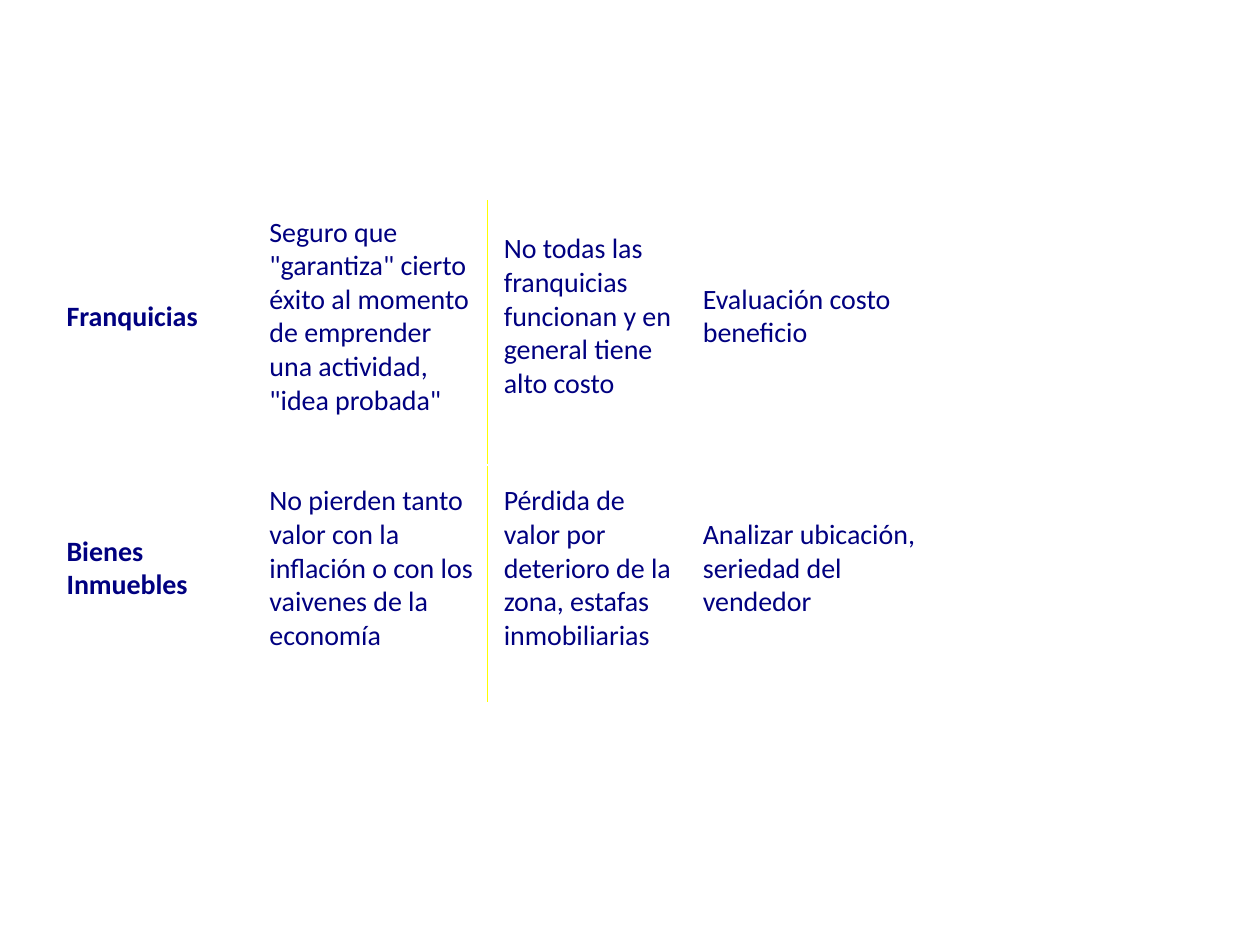
"""Build a slide comparing two investment options in a framed grid."""
from dataclasses import dataclass

import pptx
import pptx.dml.color
import pptx.enum.shapes
import pptx.enum.text
import pptx.util

Inches = pptx.util.Inches


@dataclass(frozen=True)
class Theme:
    font: str = "Calibri"
    size: int = 16
    ink: str = "000080"
    paper: str = "FFFFFF"
    accent: str = "FFFF00"
    line: float = 0.75


THEME = Theme()
INSET = 0.01
COLUMNS = [
    (0.42, 1.62, 1.59, THEME.accent),
    (2.03, 1.85, 1.82, THEME.accent),
    (3.89, 1.58, 1.55, THEME.paper),
    (5.47, 2.01, 1.99, THEME.accent),
    (7.48, 2.19, 2.16, THEME.paper),
]
ROWS = [
    (1.58, 2.11, [
        "Franquicias",
        'Seguro que "garantiza" cierto éxito al momento de emprender una actividad, "idea probada"',
        "No todas las franquicias funcionan y en general tiene alto costo",
        "Evaluación costo beneficio",
        "",
    ]),
    (3.69, 1.89, [
        "Bienes Inmuebles",
        "No pierden tanto valor con la inflación o con los vaivenes de la economía",
        "Pérdida de valor por deterioro de la zona, estafas inmobiliarias",
        "Analizar ubicación, seriedad del vendedor",
        "",
    ]),
]


def rgb(value):
    return pptx.dml.color.RGBColor.from_string(value)


def add_rect(shapes, left, top, width, height, fill):
    sp = shapes.add_shape(
        pptx.enum.shapes.MSO_SHAPE.RECTANGLE,
        Inches(left), Inches(top), Inches(width), Inches(height))
    sp.shadow.inherit = False
    sp.fill.solid()
    sp.fill.fore_color.rgb = rgb(fill)
    sp.line.color.rgb = rgb(THEME.paper)
    sp.line.width = pptx.util.Pt(THEME.line)
    return sp


def set_text(sp, text, bold=False, size=THEME.size, color=THEME.ink):
    tf = sp.text_frame
    tf.word_wrap = True
    tf.vertical_anchor = pptx.enum.text.MSO_ANCHOR.MIDDLE
    tf.margin_bottom = Inches(0.32)
    p = tf.paragraphs[0]
    p.alignment = pptx.enum.text.PP_ALIGN.LEFT
    r = p.add_run()
    r.text = text
    r.font.name = THEME.font
    r.font.size = pptx.util.Pt(size)
    r.font.bold = bold
    r.font.color.rgb = rgb(color)


def add_cell(shapes, column, top, height, text, bold=False):
    left, width, inner_width, fill = column
    add_rect(shapes, left, top, width, height, fill)
    sp = add_rect(shapes, left + INSET, top, inner_width, height, THEME.paper)
    if text:
        set_text(sp, text, bold=bold)


def main():
    prs = pptx.Presentation()
    prs.slide_width, prs.slide_height = Inches(10), Inches(7.5)
    s = prs.slides.add_slide(prs.slide_layouts[6])
    grid = s.shapes.add_group_shape()
    for top, height, texts in ROWS:
        for i, (column, text) in enumerate(zip(COLUMNS, texts)):
            add_cell(grid.shapes, column, top, height, text, bold=i == 0)
    prs.save("out.pptx")


if __name__ == "__main__":
    main()
